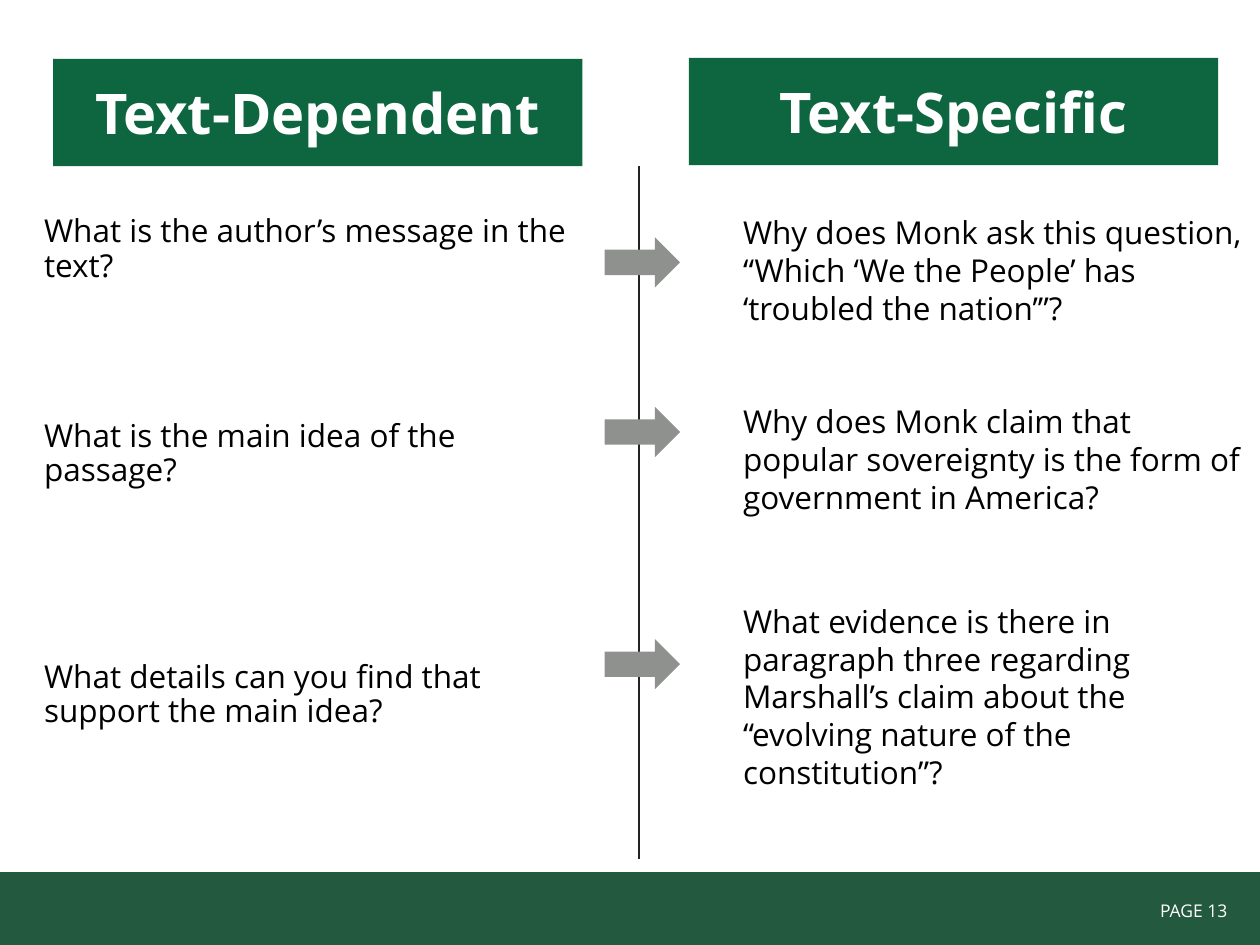
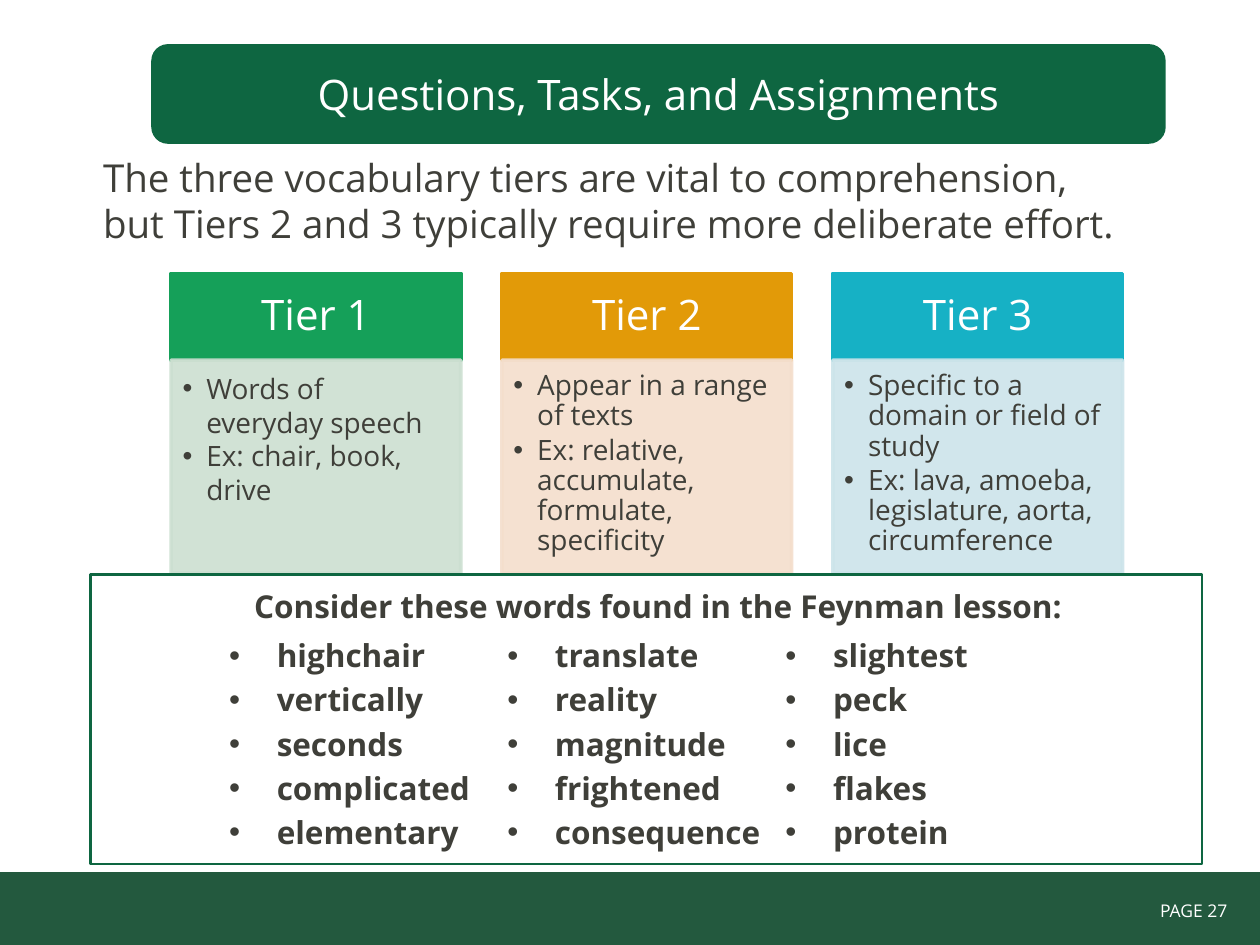
import pptx
import pptx.util
import pptx.dml.color
import pptx.enum.shapes
import pptx.enum.text
import pptx.oxml
import pptx.oxml.ns
from dataclasses import dataclass

Cm, Pt = pptx.util.Cm, pptx.util.Pt
SHAPE = pptx.enum.shapes.MSO_SHAPE
ALIGN = pptx.enum.text.PP_ALIGN
MIDDLE = pptx.enum.text.MSO_ANCHOR.MIDDLE


@dataclass(frozen=True)
class Theme:
    font: str = "Open Sans"
    green: str = "0E6641"
    band: str = "23593E"
    ink: str = "3F3F39"
    black: str = "000000"
    white: str = "FFFFFF"
    arrow: str = "8F918F"
    rule: str = "222322"
    header: int = 32
    title: int = 24
    lead: int = 22
    body: int = 18
    tier: int = 16
    footer: int = 10


T = Theme()

# Content of the comparison slide: (question, space before in points)
COMPARISON = [
    dict(heading="Text-Dependent", header_at=(1.07, 1.19), body_at=(0.64, 4.22, 11.18, 12.24),
         spacing=0.9, questions=[
             ("What is the author’s message in the text?", 0),
             ("What is the main idea of the passage?", 77.7),
             ("What details can you find that support the main idea?", 98.9)]),
    dict(heading="Text-Specific", header_at=(13.89, 1.17), body_at=(14.73, 4.17, 10.67, 12.01),
         spacing=1.0, questions=[
             ("Why does Monk ask this question, “Which ‘We the People’ has ‘troubled the nation’”?", 0),
             ("Why does Monk claim that popular sovereignty is the form of government in America?", 43),
             ("What evidence is there in paragraph three regarding Marshall’s claim about the "
              "“evolving nature of the constitution”?", 49.4)]),
]
ARROW_TOPS = [4.78, 8.2, 12.88]

# Content of the vocabulary slide
TITLE = "Questions, Tasks, and Assignments"
LEAD = ("The three vocabulary tiers are vital to comprehension,\v"
        "but Tiers 2 and 3 typically require more deliberate effort.")
TIERS = [
    dict(name="Tier 1", color="15A059", tint="CCDFD1", spacing=1.0, after=0,
         points=["Words of everyday speech", "Ex: chair, book, drive"]),
    dict(name="Tier 2", color="E29A08", tint="F4DECC", spacing=0.9, after=2.4,
         points=["Appear in a range of texts",
                 "Ex: relative, accumulate, formulate, specificity"]),
    dict(name="Tier 3", color="16B1C5", tint="CCE4EA", spacing=0.9, after=2.4,
         points=["Specific to a domain or field of study",
                 "Ex: lava, amoeba, legislature, aorta, circumference"]),
]
WORDS_HEADING = "Consider these words found in the Feynman lesson:"
WORDS = ["highchair", "vertically", "seconds", "complicated", "elementary",
         "translate", "reality", "magnitude", "frightened", "consequence",
         "slightest", "peck", "lice", "flakes", "protein"]


def rgb(color):
    return pptx.dml.color.RGBColor.from_string(color)


def set_alpha(fill_parent, percent):
    for clr in fill_parent.iter(pptx.oxml.ns.qn("a:srgbClr")):
        alpha = clr.makeelement(pptx.oxml.ns.qn("a:alpha"), {"val": str(percent * 1000)})
        clr.append(alpha)


def add_bullet(p, indent):
    pPr = p._p.get_or_add_pPr()
    pPr.set("marL", str(Cm(indent)))
    pPr.set("indent", str(-Cm(indent)))
    ns = pptx.oxml.ns.nsdecls("a")
    pPr.append(pptx.oxml.parse_xml(f'<a:buFont {ns} typeface="Arial"/>'))
    pPr.append(pptx.oxml.parse_xml(f'<a:buChar {ns} char="•"/>'))


def write(sp, texts, size, color, bold=False, align=ALIGN.LEFT, anchor=None,
          insets=(0.25, 0.13, 0.25, 0.13), spacing=1.0, before=None, after=0, bullet=None):
    """Fill a shape with one paragraph per text; before lists the space above each."""
    tf = sp.text_frame
    tf.word_wrap = True
    tf.vertical_anchor = anchor or pptx.enum.text.MSO_ANCHOR.TOP
    tf.margin_left, tf.margin_top, tf.margin_right, tf.margin_bottom = map(Cm, insets)
    for i, text in enumerate(texts):
        p = tf.paragraphs[0] if i == 0 else tf.add_paragraph()
        p.text = text
        p.alignment = align
        p.line_spacing = spacing
        p.space_before = Pt(before[i] if before else 0)
        p.space_after = Pt(after)
        if bullet:
            add_bullet(p, bullet)
        for r in p.runs:
            r.font.name, r.font.size, r.font.bold = T.font, Pt(size), bold
            r.font.color.rgb = rgb(color)
    return tf


def add_box(s, at, fill=None, line=None, width=2, kind=SHAPE.RECTANGLE, alpha=None):
    sp = s.shapes.add_shape(kind, *map(Cm, at))
    sp.shadow.inherit = False
    if fill:
        sp.fill.solid()
        sp.fill.fore_color.rgb = rgb(fill)
    else:
        sp.fill.background()
    if line:
        sp.line.color.rgb = rgb(line)
        sp.line.width = Pt(width)
    else:
        sp.line.fill.background()
    if alpha:
        set_alpha(sp._element.spPr, alpha)
    return sp


def add_text(s, at, texts, size, color, **style):
    return write(s.shapes.add_textbox(*map(Cm, at)), texts, size, color, **style)


def new_slide(prs, page):
    """Blank slide with the footer band and page number."""
    s = prs.slides.add_slide(prs.slide_layouts[6])
    add_box(s, (0, 17.58, 25.4, 1.47), T.band)
    add_text(s, (21.03, 18.01, 4.04, 0.69), [f"PAGE {page}"], T.footer, T.white,
             align=ALIGN.RIGHT, insets=(0.25, 0.13, 0.33, 0.13))
    return s


def build_comparison(prs):
    s = new_slide(prs, 13)
    # Question columns
    for side in COMPARISON:
        questions, gaps = zip(*side["questions"])
        add_text(s, side["body_at"], questions, T.body, T.black,
                 spacing=side["spacing"], before=gaps)

    # Divider and arrows
    divider = s.shapes.add_connector(pptx.enum.shapes.MSO_CONNECTOR.STRAIGHT,
                                     Cm(12.88), Cm(3.35), Cm(12.88), Cm(17.32))
    divider.line.color.rgb = rgb(T.rule)
    divider.line.width = Pt(1.5)
    spPr = divider._element.spPr
    spPr.append(spPr.makeelement(pptx.oxml.ns.qn("a:effectLst"), {}))
    for top in ARROW_TOPS:
        add_box(s, (12.19, top, 1.52, 1.02), T.arrow, kind=SHAPE.RIGHT_ARROW)

    # Column headers
    for side in COMPARISON:
        header = add_box(s, (*side["header_at"], 10.67, 2.16), T.green)
        write(header, [side["heading"]], T.header, T.white, bold=True,
              align=ALIGN.CENTER, anchor=MIDDLE)


def build_vocabulary(prs):
    s = new_slide(prs, 27)
    add_text(s, (1.83, 2.44, 22.4, 3.18), [LEAD], T.lead, T.ink, anchor=MIDDLE)

    # Tier cards
    left, step, width = 3.45, 6.67, 5.84
    for i, tier in enumerate(TIERS):
        x = left + i * step
        head = add_box(s, (x, 5.51, width, 1.75), tier["color"], tier["color"])
        write(head, [tier["name"]], T.title, T.white, align=ALIGN.CENTER, anchor=MIDDLE,
              insets=(0.48, 0.28, 0.48, 0.28), spacing=0.9)
        card = add_box(s, (x, 7.26, width, 4.29), tier["tint"], tier["tint"], alpha=90)
        write(card, tier["points"], T.tier, T.ink, insets=(0.23, 0.23, 0.3, 0.36),
              spacing=tier["spacing"], after=tier["after"], bullet=0.48)

    # Framed word list in three columns
    add_box(s, (1.83, 11.58, 22.4, 5.84), line=T.green, width=1.5)
    add_text(s, (4.19, 11.71, 18.16, 1.02), [WORDS_HEADING], T.body, T.ink,
             bold=True, align=ALIGN.CENTER)
    tf = add_text(s, (4.37, 12.7, 17.32, 4.7), WORDS, T.body, T.ink, bold=True,
                  before=[0] + [3.6] * (len(WORDS) - 1), bullet=0.96)
    tf._txBody.bodyPr.set("numCol", "3")

    # Title banner
    banner = add_box(s, (3.05, 0.89, 20.45, 2.01), T.green, kind=SHAPE.ROUNDED_RECTANGLE)
    write(banner, [TITLE], T.title, T.white, align=ALIGN.CENTER, anchor=MIDDLE)


def main():
    prs = pptx.Presentation()
    prs.slide_width, prs.slide_height = Cm(25.4), Cm(19.05)
    build_comparison(prs)
    build_vocabulary(prs)
    prs.save("out.pptx")


if __name__ == "__main__":
    main()
